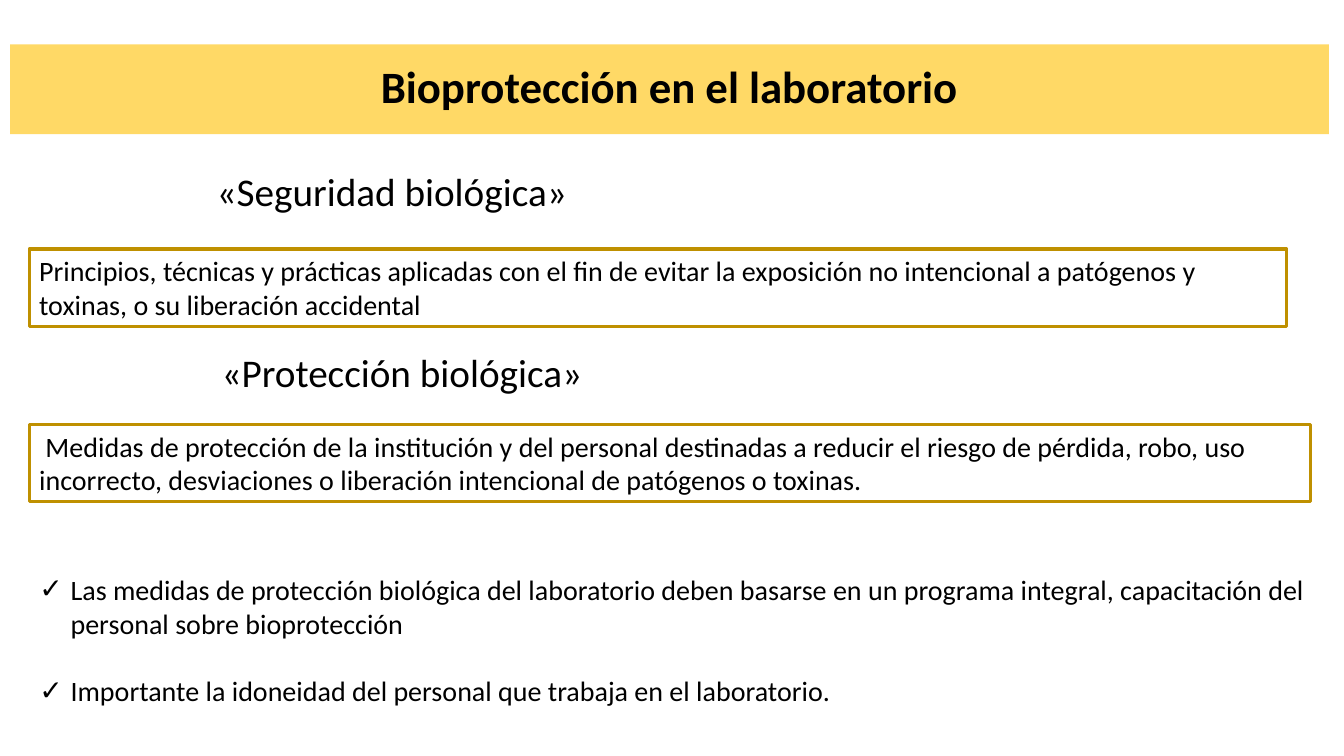
import dataclasses

import lxml.etree
import pptx
import pptx.dml.color
import pptx.enum.shapes
import pptx.enum.text
import pptx.oxml.ns
import pptx.util

Inches = pptx.util.Inches
Pt = pptx.util.Pt
Align = pptx.enum.text.PP_ALIGN
Anchor = pptx.enum.text.MSO_ANCHOR


@dataclasses.dataclass(frozen=True)
class Theme:
    font: str = "Calibri"
    ink: str = "000000"
    band: str = "FFD966"
    edge: str = "BF9000"
    title: int = 32
    head: int = 28
    body: int = 20
    rule: float = 2.25


def tint(code):
    return pptx.dml.color.RGBColor.from_string(code)


class Page:
    def __init__(self, deck, theme):
        self.theme = theme
        self.slide = deck.slides.add_slide(deck.slide_layouts[1])

    def place(self, shape, box):
        shape.left, shape.top, shape.width, shape.height = map(Inches, box)

    def style(self, para, size, bold=False, align=Align.LEFT):
        para.alignment = align
        font = para.font
        font.name = self.theme.font
        font.size = Pt(size)
        font.bold = bold
        font.color.rgb = tint(self.theme.ink)

    def label(self, shape, text, size):
        frame = shape.text_frame
        frame.word_wrap = True
        frame.vertical_anchor = Anchor.TOP
        frame.text = text
        self.style(frame.paragraphs[0], size)

    def title(self, text, box):
        shape = self.slide.shapes.title
        self.place(shape, box)
        shape.fill.solid()
        shape.fill.fore_color.rgb = tint(self.theme.band)
        frame = shape.text_frame
        frame.text = text
        frame.vertical_anchor = Anchor.MIDDLE
        para = frame.paragraphs[0]
        para.line_spacing = 0.9
        self.style(para, self.theme.title, True, Align.CENTER)

    def head(self, text, box):
        shape = self.slide.shapes.add_textbox(*map(Inches, box))
        self.label(shape, text, self.theme.head)

    def panel(self, text, box):
        kind = pptx.enum.shapes.MSO_SHAPE.RECTANGLE
        shape = self.slide.shapes.add_shape(kind, *map(Inches, box))
        shape.shadow.inherit = False
        shape.fill.background()
        shape.line.color.rgb = tint(self.theme.edge)
        shape.line.width = Pt(self.theme.rule)
        self.label(shape, text, self.theme.body)

    def bullets(self, items, box):
        shape = self.slide.placeholders[1]
        self.place(shape, box)
        frame = shape.text_frame
        frame.auto_size = pptx.enum.text.MSO_AUTO_SIZE.NONE
        frame.text = "\n".join(items)
        for i, para in enumerate(frame.paragraphs):
            self.check(para)
            para.space_before = Pt(24.4 if i else 0)
            self.style(para, self.theme.body)

    def check(self, para):
        props = para._p.get_or_add_pPr()
        props.set("marL", str(Inches(0.31)))
        props.set("indent", str(Inches(-0.31)))
        mark = lxml.etree.SubElement(props, pptx.oxml.ns.qn("a:buChar"))
        mark.set("char", "✓")


def main():
    deck = pptx.Presentation()
    deck.slide_width = Inches(13.33)
    deck.slide_height = Inches(7.5)
    page = Page(deck, Theme())
    page.title("Bioprotección en el laboratorio", (0.1, 0.44, 13.08, 0.89))
    page.head("«Seguridad biológica»", (2.05, 1.61, 3.98, 0.57))
    page.panel(
        "Principios, técnicas y prácticas aplicadas con el fin de evitar la "
        "exposición no intencional a patógenos y toxinas, o su liberación "
        "accidental",
        (0.29, 2.47, 12.47, 0.77),
    )
    page.head("«Protección biológica»", (2.1, 3.41, 4.52, 0.57))
    page.panel(
        " Medidas de protección de la institución y del personal destinadas a "
        "reducir el riesgo de pérdida, robo, uso incorrecto, desviaciones o "
        "liberación intencional de patógenos o toxinas.",
        (0.29, 4.21, 12.71, 0.77),
    )
    page.bullets(
        [
            "Las medidas de protección biológica del laboratorio deben basarse "
            "en un programa integral, capacitación del personal sobre "
            "bioprotección",
            "Importante la idoneidad del personal que trabaja en el laboratorio.",
        ],
        (0.29, 5.63, 13.04, 1.87),
    )
    deck.save("out.pptx")


if __name__ == "__main__":
    main()
